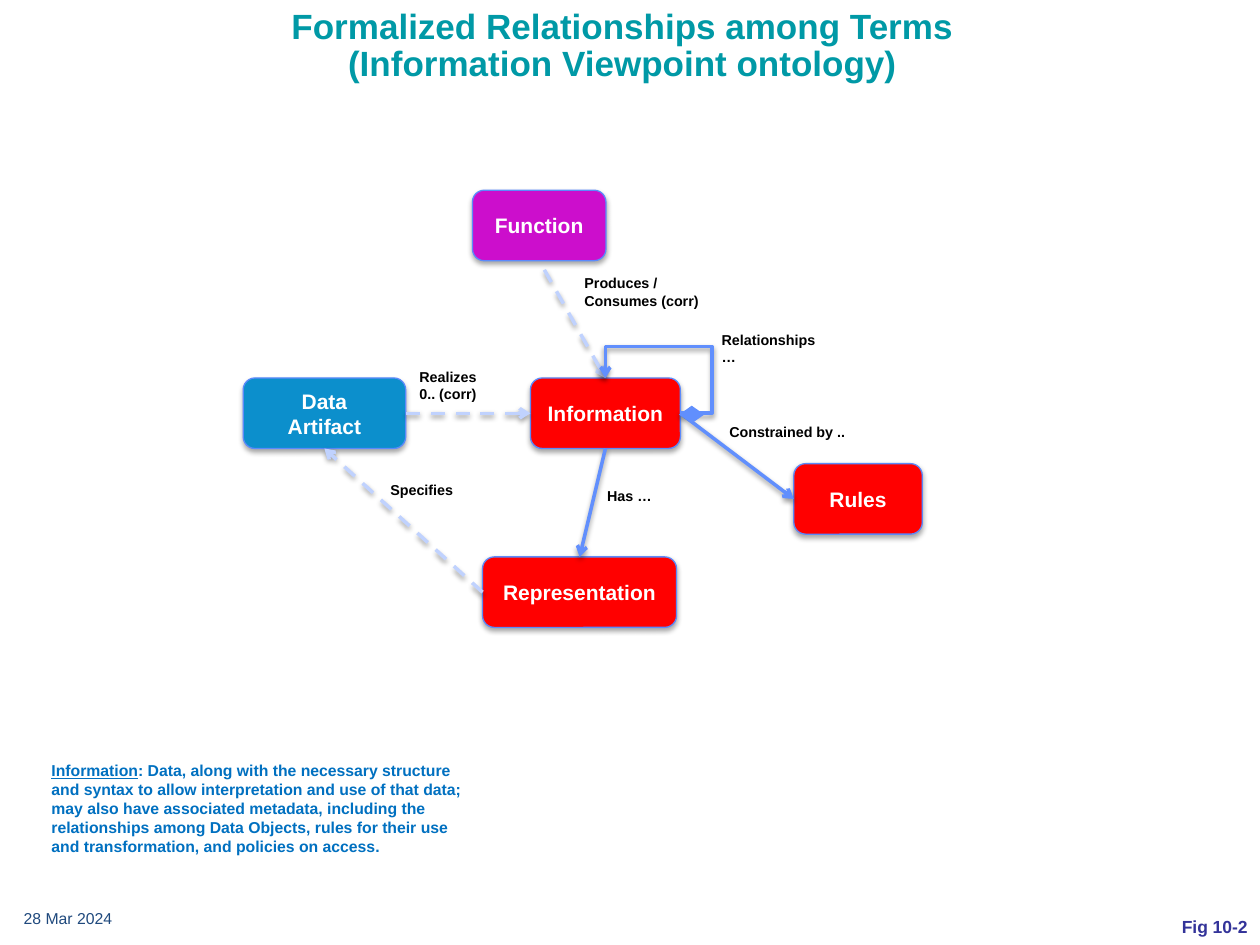
"""Builds the slide of Information Viewpoint terms and how they relate."""
from pptx import Presentation
from pptx.dml.color import RGBColor as Rgb
from pptx.enum.dml import MSO_LINE as Dash
from pptx.enum.shapes import MSO_CONNECTOR as Link, MSO_SHAPE as Form
from pptx.enum.text import MSO_ANCHOR as Anchor, PP_ALIGN as Align
from pptx.oxml import parse_xml
from pptx.oxml.ns import nsdecls, qn
from pptx.util import Inches, Pt

HUES = {
    "title": "0099A6", "red": "FF0000", "plum": "CC0ECC", "blue": "0C8FCC",
    "edge": "5B8AFB", "link": "618FFD", "pale": "C0D2FE", "white": "FFFFFF",
    "black": "000000", "note": "0070C0", "date": "1F497D", "fig": "333399",
}
TOP, LEFT, BOTTOM, RIGHT = range(4)


class Sheet:
    font = "Arial"
    cols, rows = 100, 75

    def __init__(self, deck):
        self.deck = deck
        self.slide = deck.slides.add_slide(deck.slide_layouts[5])
        self.shapes = self.slide.shapes

    def grid(self, x, y):
        return (round(x * self.deck.slide_width / self.cols),
                round(y * self.deck.slide_height / self.rows))

    def area(self, x, y, w, h):
        return *self.grid(x, y), *self.grid(w, h)

    def hue(self, name):
        return Rgb.from_string(HUES[name])

    def run(self, para, text, size, hue, bold=True, under=None):
        run = para.add_run()
        run.text = text
        font = run.font
        font.name, font.size, font.bold = self.font, Pt(size), bold
        font.underline = under
        font.color.rgb = self.hue(hue)

    def shade(self, shape, alpha, dist):
        props = shape.element.spPr
        for old in props.findall(qn("a:effectLst")):
            props.remove(old)
        props.append(parse_xml(
            f'<a:effectLst {nsdecls("a")}><a:outerShdw blurRad="{Pt(3.1)}" '
            f'dist="{Pt(dist)}" dir="5400000" rotWithShape="0">'
            f'<a:srgbClr val="000000"><a:alpha val="{alpha}000"/></a:srgbClr>'
            '</a:outerShdw></a:effectLst>'))

    def title(self, *lines):
        head = self.shapes.title
        head.left, head.top, head.width, head.height = self.area(4.4, 0.2, 90, 8.4)
        frame = head.text_frame
        frame.word_wrap, frame.vertical_anchor = True, Anchor.TOP
        para = frame.paragraphs[0]
        para.alignment, para.line_spacing = Align.CENTER, 0.9
        for i, line in enumerate(lines):
            if i:
                para.add_line_break()
            self.run(para, line, 20, "title")

    def box(self, x, y, w, hue, *lines):
        box = self.shapes.add_shape(Form.ROUNDED_RECTANGLE, *self.area(x, y, w, 5.6))
        box.fill.solid()
        box.fill.fore_color.rgb = self.hue(hue)
        box.line.color.rgb = self.hue("edge")
        box.line.width = Pt(0.75)
        self.shade(box, 35, 1.8)
        frame = box.text_frame
        frame.vertical_anchor = Anchor.MIDDLE
        for i, line in enumerate(lines):
            para = frame.add_paragraph() if i else frame.paragraphs[0]
            para.alignment = Align.CENTER
            self.run(para, line, 12, "white")
        return box

    def text(self, x, y, w, h, runs, size=8.2, hue="black", bold=True,
             align=Align.LEFT, anchor=Anchor.TOP, indent=0):
        frame = self.shapes.add_textbox(*self.area(x, y, w, h)).text_frame
        frame.word_wrap, frame.vertical_anchor = True, anchor
        para = frame.paragraphs[0]
        para.alignment = align
        if indent:
            para.level = 1
            props = para._p.get_or_add_pPr()
            props.set("marL", str(Inches(indent)))
            props.set("indent", "0")
        for words, under in runs:
            self.run(para, words, size, hue, bold, under)

    def ink(self, line, hue, end, dash=False):
        line.line.color.rgb = self.hue(hue)
        line.line.width = Pt(2)
        if dash:
            line.line.dash_style = Dash.DASH
        edge = line.element.spPr.find(qn("a:ln"))
        edge.append(parse_xml(f'<a:{end}End {nsdecls("a")} type="arrow"/>'))
        self.shade(line, 38, 1.6)

    def join(self, first, side, last, port, end="tail", dash=False):
        line = self.shapes.add_connector(Link.STRAIGHT, 0, 0, 0, 0)
        line.begin_connect(first, side)
        line.end_connect(last, port)
        self.ink(line, "pale" if dash else "link", end, dash)

    def loop(self, start, stop, *bends):
        line = self.shapes.add_connector(
            Link.ELBOW, *self.grid(*start), *self.grid(*stop))
        geom = line.element.spPr.find(qn("a:prstGeom"))
        geom.set("prst", "bentConnector4")
        guides = geom.get_or_add_avLst()
        for i, bend in enumerate(bends, 1):
            guides.append(parse_xml(
                f'<a:gd {nsdecls("a")} name="adj{i}" fmla="val {bend}"/>'))
        self.ink(line, "link", "tail")

    def gem(self, x, y, w, h):
        gem = self.shapes.add_shape(Form.FLOWCHART_DECISION, *self.area(x, y, w, h))
        gem.shadow.inherit = False
        gem.fill.solid()
        gem.fill.fore_color.rgb = self.hue("link")
        gem.line.fill.background()


def main():
    deck = Presentation()
    deck.slide_width, deck.slide_height = Inches(10), Inches(7.5)
    sheet = Sheet(deck)
    sheet.title("Formalized Relationships among Terms",
                "(Information Viewpoint ontology)")

    form = sheet.box(38.3, 44.2, 15.4, "red", "Representation")
    func = sheet.box(37.5, 15.1, 10.6, "plum", "Function")
    info = sheet.box(42.1, 30, 11.9, "red", "Information")
    rules = sheet.box(63, 36.8, 10.2, "red", "Rules")
    data = sheet.box(19.3, 30, 12.9, "blue", "Data", "Artifact")

    sheet.join(info, RIGHT, rules, LEFT)
    sheet.join(info, TOP, func, BOTTOM, "head", True)
    sheet.join(info, LEFT, data, RIGHT, "head", True)
    sheet.join(info, BOTTOM, form, TOP)
    sheet.join(form, LEFT, data, BOTTOM, dash=True)
    sheet.loop((54, 32.8), (48.05, 30), -42200, 188900)
    sheet.gem(53.9, 32.2, 2, 1.4)

    for x, y, w, h, words in (
            (56.9, 33.1, 12, 2.4, "Constrained by .."),
            (45.4, 21.3, 11.9, 3.8, "Produces / Consumes (corr)"),
            (32.3, 28.7, 7.5, 3.8, "Realizes 0.. (corr)"),
            (47.2, 38.2, 9.1, 2.4, "Has …"),
            (56.3, 25.8, 9.7, 3.8, "Relationships …"),
            (30, 37.7, 9.1, 2.4, "Specifies")):
        sheet.text(x, y, w, h, [(words, None)])

    sheet.text(-1.9, 59.9, 40.5, 8.6, [
        ("Information", True),
        (": Data, along with the necessary structure and syntax to allow "
         "interpretation and use of that data; may also have associated "
         "metadata, including the relationships among Data Objects, rules for "
         "their use and transformation, and policies on access.", None),
    ], 9, "note", indent=0.5)
    sheet.text(0.9, 71.5, 10, 2.8, [("28 Mar 2024", None)], 9, "date",
               bold=False, anchor=Anchor.MIDDLE)
    sheet.text(81.1, 72.1, 18.9, 2.9, [("Fig 10-2", None)], 10, "fig",
               align=Align.RIGHT, anchor=Anchor.MIDDLE)
    deck.save("out.pptx")


if __name__ == "__main__":
    main()
